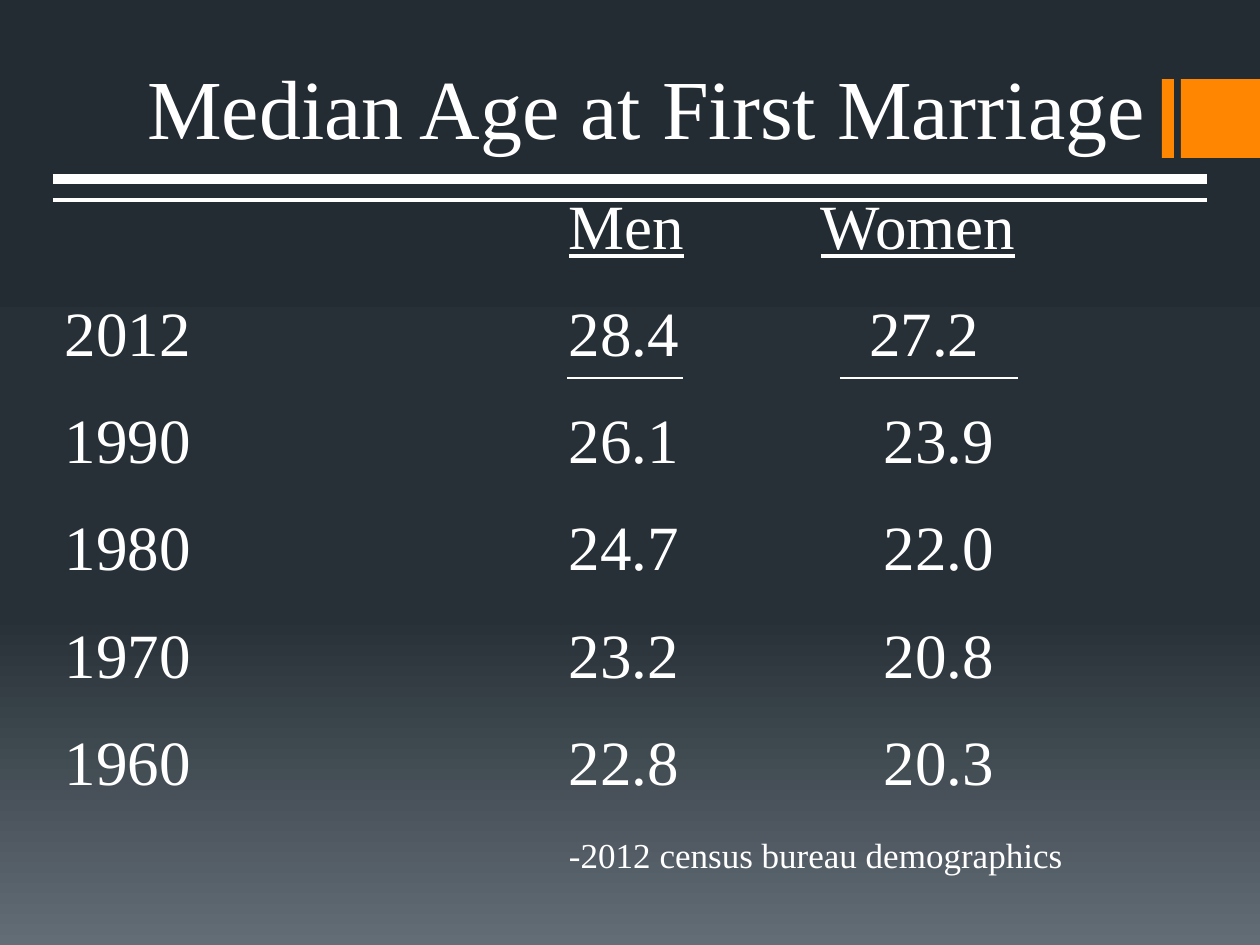
from copy import deepcopy
from dataclasses import dataclass

from pptx import Presentation
from pptx import util as u
from pptx.dml.color import RGBColor
from pptx.enum import shapes, text
from pptx.oxml import ns, xmlchemy

EMU_PER_PX = 914400 / 126


def px(length):
    return u.Emu(round(length * EMU_PER_PX))


@dataclass(frozen=True)
class Theme:
    font: str = "Times New Roman"
    ink: str = "FFFFFF"
    accent: str = "FF8600"
    backdrop: tuple = ((0, "242C33"), (0.65, "273037"), (1, "636D76"))
    title_size: int = 48
    body_size: int = 36
    note_size: int = 20
    row_gap: float = 18.1
    note_gap: int = 20


class SlideBuilder:
    def __init__(self, slide, theme):
        self.slide = slide
        self.theme = theme

    def background(self):
        fill = self.slide.background.fill
        fill.gradient()
        fill.gradient_angle = 270
        stop_list = self.slide.element.find(".//" + ns.qn("a:gsLst"))
        stop_list.insert(1, deepcopy(stop_list[0]))
        for stop, (position, color) in zip(fill.gradient_stops, self.theme.backdrop):
            stop.position = position
            stop.color.rgb = RGBColor.from_string(color)

    def block(self, left, top, width, height):
        shape = self.slide.shapes.add_shape(
            shapes.MSO_SHAPE.RECTANGLE, *map(px, (left, top, width, height)))
        shape.shadow.inherit = False
        shape.fill.solid()
        shape.fill.fore_color.rgb = RGBColor.from_string(self.theme.accent)
        shape.line.fill.background()

    def rule(self, left, right, y, weight):
        line = self.slide.shapes.add_connector(
            shapes.MSO_CONNECTOR.STRAIGHT, px(left), px(y), px(right), px(y))
        line.line.color.rgb = RGBColor.from_string(self.theme.ink)
        line.line.width = u.Pt(weight)
        line.element.spPr.append(xmlchemy.OxmlElement("a:effectLst"))

    def place(self, shape, left, top, width, height):
        shape.left, shape.top, shape.width, shape.height = map(
            px, (left, top, width, height))
        frame = shape.text_frame
        frame.margin_left = frame.margin_right = 0
        frame.margin_top = frame.margin_bottom = 0
        frame.vertical_anchor = text.MSO_ANCHOR.TOP
        frame.auto_size = text.MSO_AUTO_SIZE.NONE
        frame.word_wrap = True
        return frame

    def style(self, run, size, underline=False):
        run.font.name = self.theme.font
        run.font.size = u.Pt(size)
        run.font.color.rgb = RGBColor.from_string(self.theme.ink)
        run.font.underline = underline

    def title(self, wording, *box):
        frame = self.place(self.slide.shapes.title, *box)
        frame.text = wording
        frame.paragraphs[0].alignment = text.PP_ALIGN.CENTER
        self.style(frame.paragraphs[0].runs[0], self.theme.title_size)

    def body(self, *box):
        return self.place(self.slide.placeholders[1], *box)

    def row(self, paragraph, pieces, size, gap, underline=False):
        """Write the pieces in turn; only words are underlined."""
        paragraph.space_before = u.Pt(gap)
        properties = paragraph._p.get_or_add_pPr()
        properties.set("marL", "0")
        properties.set("indent", "0")
        properties.append(xmlchemy.OxmlElement("a:buNone"))
        for piece in pieces:
            run = paragraph.add_run()
            run.text = piece
            self.style(run, size, underline and bool(piece.strip()))
            if piece == " ":
                # One widened space sets the latest age in from its tab
                run.font._element.set("spc", "1850")


def main():
    theme = Theme()
    presentation = Presentation()
    presentation.slide_width, presentation.slide_height = px(1260), px(945)
    slide = presentation.slides.add_slide(presentation.slide_layouts[1])
    builder = SlideBuilder(slide, theme)

    # Backdrop and accent blocks
    builder.background()
    builder.block(1162, 79, 12, 79)
    builder.block(1181, 79, 79, 79)

    # Title
    builder.title("Median Age at First Marriage", 53, 56, 1187, 97)

    # Ages, aligned on the template's half-inch default tabs
    frame = builder.body(65, 186, 1162, 720)
    to_men, year_to_men, to_women, to_age = ("\t" * n for n in (8, 6, 3, 4))
    builder.row(frame.paragraphs[0], (to_men, "Men", to_women, "Women"),
                theme.body_size, 0, underline=True)
    ages = [
        ("2012", "28.4", (to_women, " ", "27.2")),
        ("1990", "26.1", (to_age, "23.9")),
        ("1980", "24.7", (to_age, "22.0")),
        ("1970", "23.2", (to_age, "20.8")),
        ("1960", "22.8", (to_age, "20.3")),
    ]
    for year, men, women in ages:
        builder.row(frame.add_paragraph(), (year, year_to_men, men, *women),
                    theme.body_size, theme.row_gap)

    # Credit for the figures
    builder.row(frame.add_paragraph(),
                (to_men, "-2012 census bureau demographics"),
                theme.note_size, theme.note_gap)

    # Double rule under the title, short rules under the latest ages
    builder.rule(53, 1207, 179, 6)
    builder.rule(53, 1207, 200, 2.25)
    builder.rule(567, 683, 378, 1.5)
    builder.rule(840, 1018, 378, 1.5)

    presentation.save("out.pptx")


if __name__ == "__main__":
    main()
